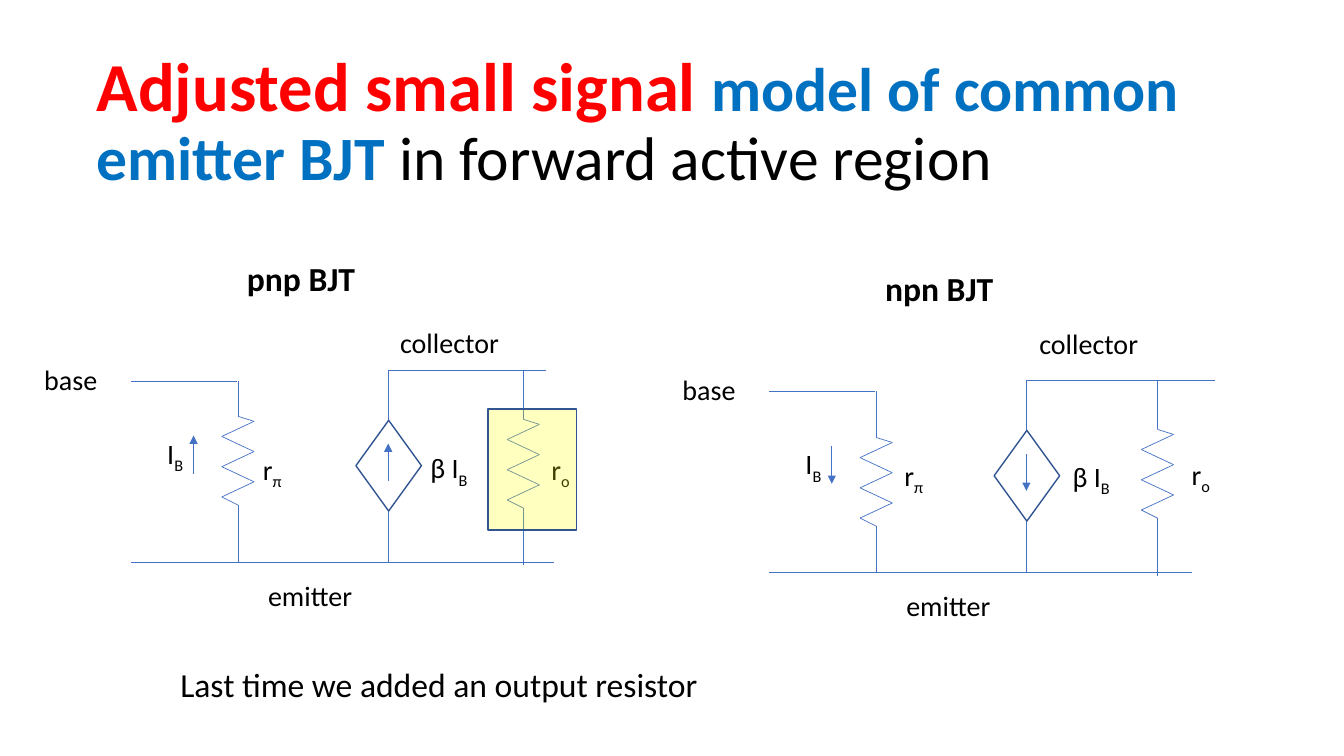
from itertools import pairwise

from lxml import etree
from pptx import Presentation
from pptx import util as u
from pptx.dml.color import RGBColor
from pptx.enum import shapes, text
from pptx.oxml.ns import qn

COLOURS = {"wire": "4472C4", "outline": "325491", "highlight": "FFFF00",
           "red": "FF0000", "blue": "0070C0", "black": "000000"}
LABEL = {"size": 20, "color": "black", "bold": False}
HEADING = {"size": 24, "color": "black", "bold": True}
CAPTION = {"size": 24, "color": "black", "bold": False}
SUBSCRIPT = -25000
ZIGZAG = [(0, 0), (0.16, 0.05), (-0.16, 0.2), (0.16, 0.35),
          (-0.16, 0.5), (0.16, 0.65), (-0.16, 0.8), (0, 0.88)]

PNP = {"heading": "pnp BJT", "current_up": True, "collector_end": 5.08,
       "input": (2.02, 1.58), "output": (4.85, 1.61),
       "collector": (3.53, 0.67), "source": (3.83, 1.88),
       "r_pi": (2.17, 1.89), "r_o": (5.03, 1.89)}
NPN = {"heading": "npn BJT", "current_up": False, "collector_end": 5.38,
       "input": (2.02, 1.69), "output": (4.81, 1.61),
       "collector": (3.54, 0.58), "source": (3.87, 1.86),
       "r_pi": (2.2, 1.85), "r_o": (5.05, 1.84)}


def colour(name):
    return RGBColor.from_string(COLOURS[name])


def write(parts, box, runs, before=10, anchor=text.MSO_ANCHOR.TOP):
    label = parts.add_textbox(*map(u.Inches, box))
    frame = label.text_frame
    frame.word_wrap = True
    frame.vertical_anchor = anchor
    line = frame.paragraphs[0]
    for key, value in {"line_spacing": 0.9, "space_before": u.Pt(before)}.items():
        setattr(line, key, value)
    for words, style, baseline in runs:
        run = line.add_run()
        run.text = words
        formats = {"name": "Calibri", "size": u.Pt(style["size"]), "bold": style["bold"]}
        for key, value in formats.items():
            setattr(run.font, key, value)
        run.font.color.rgb = colour(style["color"])
        if baseline:
            run.font._element.set("baseline", str(baseline))


def draw_wire(parts, origin, start, end, arrow=False):
    x, y = origin
    wire = parts.add_connector(
        shapes.MSO_CONNECTOR.STRAIGHT,
        *map(u.Inches, (x + start[0], y + start[1], x + end[0], y + end[1])))
    wire.line.color.rgb = colour("wire")
    wire.line.width = u.Pt(0.5)
    if arrow:
        etree.SubElement(wire.line._get_or_add_ln(), qn("a:tailEnd"), type="triangle")
    etree.SubElement(wire._element.spPr, qn("a:effectLst"))


def draw_shape(parts, kind, box):
    shape = parts.add_shape(kind, *map(u.Inches, box))
    shape.shadow.inherit = False
    shape.fill.background()
    shape.line.color.rgb = colour("outline")
    shape.line.width = u.Pt(1)
    return shape


def draw_resistor(parts, origin, place, lead_top, lead_bottom):
    x, top = place
    for start, end in pairwise(ZIGZAG):
        draw_wire(parts, origin, (x + start[0], top + start[1]), (x + end[0], top + end[1]))
    draw_wire(parts, origin, (x, lead_top), (x, top))
    draw_wire(parts, origin, (x, top + 0.88), (x, lead_bottom))


def draw_circuit(slide, box, model):
    left, top, width, height = box
    origin = (left, top)
    parts = slide.shapes.add_group_shape().shapes
    base_y, collector_y, emitter_y, source_x = 1.23, 1.12, 3.03, 3.51

    for start, end in [((2.01, base_y), (0.96, base_y)),
                       ((5.15, emitter_y), (0.96, emitter_y)),
                       ((model["collector_end"], collector_y), (source_x, collector_y)),
                       ((source_x, collector_y), (source_x, 1.62)),
                       ((source_x, 2.52), (source_x, emitter_y))]:
        draw_wire(parts, origin, start, end)
    draw_shape(parts, shapes.MSO_SHAPE.DIAMOND, (left + 3.19, top + 1.62, 0.65, 0.9))
    for x, low, high in [(source_x, 2.22, 1.85), (1.58, 2.15, 1.77)]:
        ends = (low, high) if model["current_up"] else (high, low)
        draw_wire(parts, origin, (x, ends[0]), (x, ends[1]), arrow=True)
    draw_resistor(parts, origin, model["input"], base_y, emitter_y)
    draw_resistor(parts, origin, model["output"], collector_y, 3.06)

    for place, size, words, subscript, style in [
            ((1.22, 1.74), (0.61, 0.44), "I", "B", LABEL),
            (model["source"], (0.61, 0.44), "β I", "B", LABEL),
            (model["r_pi"], (0.61, 0.44), "r", "π", LABEL),
            (model["r_o"], (0.61, 0.44), "r", "o", LABEL),
            ((0, 1.03), (1.11, 0.41), "base", "", LABEL),
            ((2.22, 3.18), (1.11, 0.41), "emitter", "", LABEL),
            (model["collector"], (1.27, 0.44), "collector", "", LABEL),
            ((2.01, 0), (1.41, 0.57), model["heading"], "", HEADING)]:
        runs = [(words, style, 0)]
        if subscript:
            runs.append((subscript, style, SUBSCRIPT))
        write(parts, (left + place[0], top + place[1], *size), runs)


def draw_title(slide, box):
    write(slide.shapes, box, [
        ("Adjusted small signal ", {"size": 49, "color": "red", "bold": True}, 0),
        ("model of common emitter BJT ", {"size": 44, "color": "blue", "bold": True}, 0),
        ("in forward active region", {"size": 44, "color": "black", "bold": False}, 0),
    ], before=0, anchor=text.MSO_ANCHOR.MIDDLE)


def draw_highlight(slide, box):
    highlight = draw_shape(slide.shapes, shapes.MSO_SHAPE.RECTANGLE, box)
    highlight.fill.solid()
    highlight.fill.fore_color.rgb = colour("highlight")
    tint = highlight._element.spPr.find(qn("a:solidFill"))[0]
    etree.SubElement(tint, qn("a:alpha"), val="25000")


def main():
    deck = Presentation()
    deck.slide_width, deck.slide_height = u.Inches(13.33), u.Inches(7.5)
    slide = deck.slides.add_slide(deck.slide_layouts[6])
    draw_title(slide, (0.86, 0.38, 12.27, 1.68))
    draw_circuit(slide, (0.34, 2.55, 5.64, 3.59), PNP)
    draw_circuit(slide, (6.67, 2.65, 5.64, 3.59), NPN)
    write(slide.shapes, (1.69, 6.58, 5.63, 0.66),
          [("Last time we added an output resistor", CAPTION, 0)])
    draw_highlight(slide, (4.84, 4.06, 0.88, 1.2))
    deck.save("out.pptx")


if __name__ == "__main__":
    main()
